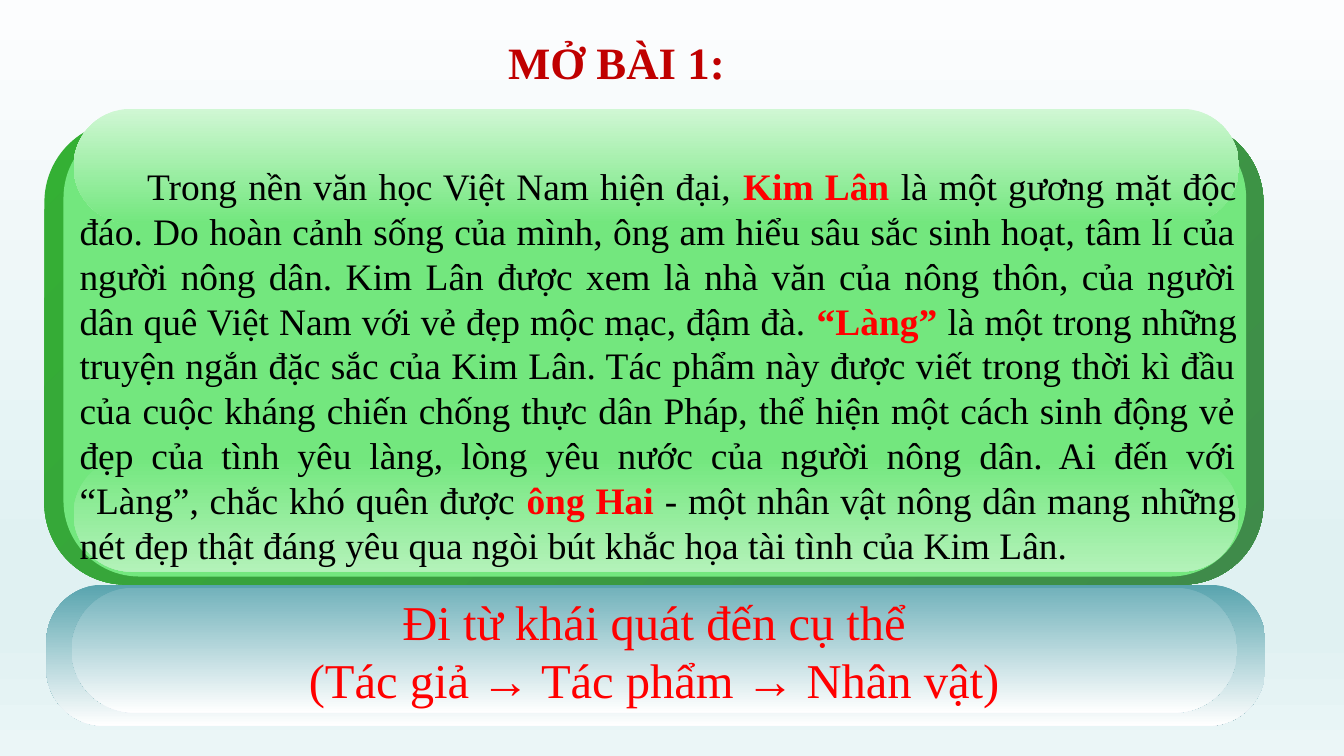
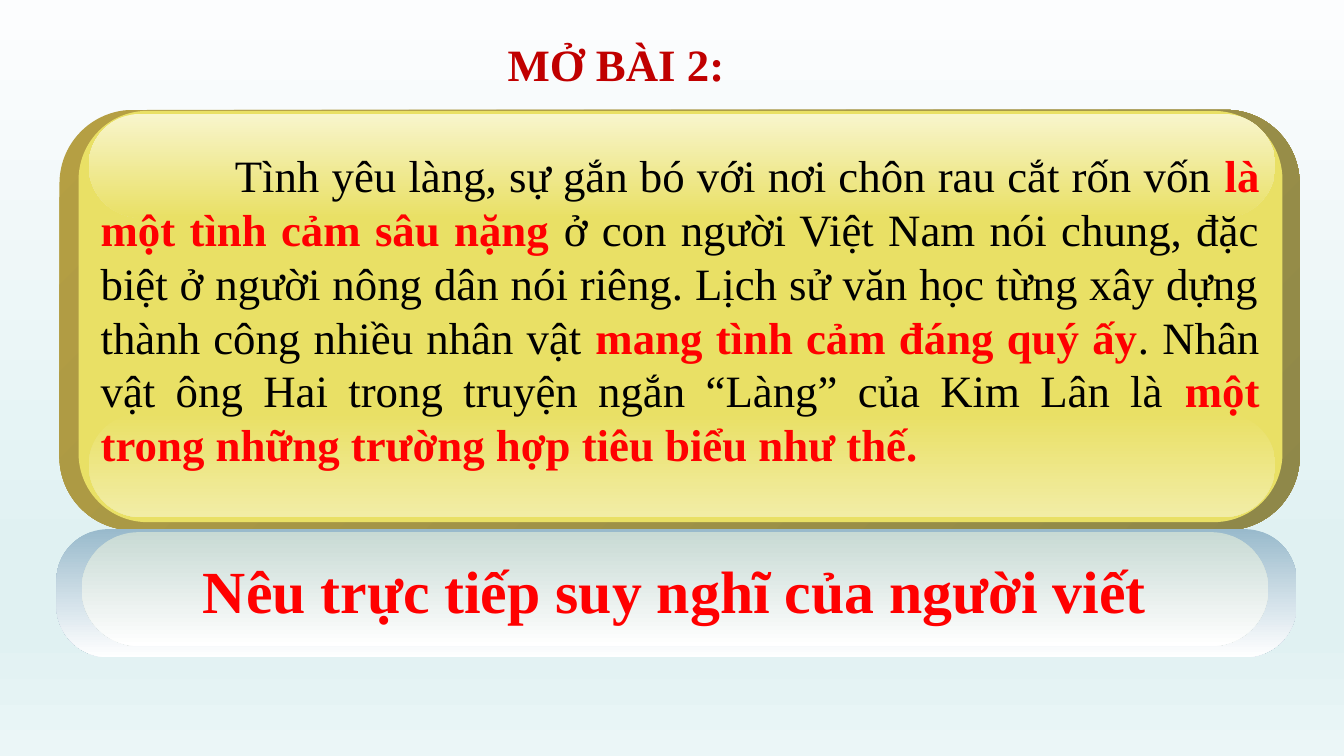
from copy import deepcopy

from pptx import Presentation
from pptx.dml.color import RGBColor
from pptx.enum.shapes import MSO_SHAPE
from pptx.enum.text import MSO_ANCHOR, MSO_AUTO_SIZE, PP_ALIGN
from pptx.util import Pt

ROUNDED = MSO_SHAPE.ROUNDED_RECTANGLE
TOP, MIDDLE = MSO_ANCHOR.TOP, MSO_ANCHOR.MIDDLE
CENTER, JUSTIFY = PP_ALIGN.CENTER, PP_ALIGN.JUSTIFY
FIXED = MSO_AUTO_SIZE.NONE

PX = 9144
SLIDE_W, SLIDE_H = 1333, 750
TITLE_ONLY = 5
FONT = "Times New Roman"
TITLE_SIZE = 32
LEADING = 1.2
DOWN, DIAGONAL = 90, 45

COLORS = {
    "title": "C00000",
    "key": "FF0000",
    "ink": "000000",
    "white": "FFFFFF",
    "sky": "FCFDFE",
    "mist": "E0F1F2",
    "haze": "EBF6F7",
    "green_dark": "34B034",
    "green_edge": "3F8B4A",
    "green": "73E77E",
    "green_light": "B3F2B9",
    "green_pale": "D0F7D4",
    "teal": "58A4AE",
    "teal_light": "72B2BB",
    "gold_dark": "B59F43",
    "gold_edge": "8F8849",
    "gold": "E9E065",
    "gold_light": "F2EDA6",
    "gold_pale": "F8F5CC",
    "steel": "99BACC",
    "sage": "C8DAD4",
}
BACKGROUND = [(0, "sky"), (74, "mist"), (83, "mist"), (100, "haze")]

OPENINGS = [
    {
        "title": "MỞ BÀI 1:",
        "title_box": (178, 29, 867, 64),
        "frame": (44, 120, 1209, 460),
        "top_gloss_y": 108,
        "palette": ("green_dark", "green_edge", "green", "green_light", "green_pale"),
        "essay_box": (69, 157, 1168, 412),
        "essay_size": 26.7,
        "indent": 67,
        "essay": [
            ("Trong nền văn học Việt Nam hiện đại, ", False),
            ("Kim Lân ", True),
            ("là một gương mặt độc đáo. Do hoàn cảnh sống của mình, ông am hiểu "
             "sâu sắc sinh hoạt, tâm lí của người nông dân. Kim Lân được xem là "
             "nhà văn của nông thôn, của người dân quê Việt Nam với vẻ đẹp mộc "
             "mạc, đậm đà. ", False),
            ("“Làng” ", True),
            ("là một trong những truyện ngắn đặc sắc của Kim Lân. Tác phẩm này "
             "được viết trong thời kì đầu của cuộc kháng chiến chống thực dân "
             "Pháp, thể hiện một cách sinh động vẻ đẹp của tình yêu làng, lòng "
             "yêu nước của người nông dân. Ai đến với “Làng”, chắc khó quên "
             "được ", False),
            ("ông Hai ", True),
            ("- một nhân vật nông dân mang những nét đẹp thật đáng yêu qua ngòi "
             "bút khắc họa tài tình của Kim Lân.", False),
        ],
        "banner": (46, 580, 1209, 140),
        "banner_colors": ("teal", "teal_light"),
        "method": ["Đi từ khái quát đến cụ thể", "(Tác giả → Tác phẩm → Nhân vật)"],
        "method_size": 34.7,
        "method_bold": False,
    },
    {
        "title": "MỞ BÀI 2:",
        "title_box": (411, 31, 400, 64),
        "frame": (59, 109, 1230, 417),
        "top_gloss_y": 113,
        "palette": ("gold_dark", "gold_edge", "gold", "gold_light", "gold_pale"),
        "essay_box": (90, 142, 1169, 374),
        "essay_size": 32,
        "indent": 133,
        "essay": [
            ("Tình yêu làng, sự gắn bó với nơi chôn rau cắt rốn vốn ", False),
            ("là một tình cảm sâu nặng ", True),
            ("ở con người Việt Nam nói chung, đặc biệt ở người nông dân nói "
             "riêng. Lịch sử văn học từng xây dựng thành công nhiều nhân vật ", False),
            ("mang tình cảm đáng quý ấy", True),
            (". Nhân vật ông Hai trong truyện ngắn “Làng” của Kim Lân là ", False),
            ("một trong những trường hợp tiêu biểu như thế.", True),
        ],
        "banner": (56, 525, 1230, 127),
        "banner_colors": ("steel", "sage"),
        "method": ["Nêu trực tiếp suy nghĩ của người viết"],
        "method_size": 42.7,
        "method_bold": True,
    },
]


def rgb(color):
    return RGBColor.from_string(COLORS[color])


def paint_gradient(fill, owner, stops, angle):
    fill.gradient()
    fill.gradient_angle = 360 - angle
    stop_list = owner.xpath(".//a:gsLst")[0]
    while len(stop_list) < len(stops):
        stop_list.append(deepcopy(stop_list[0]))
    for stop, (percent, color) in zip(fill.gradient_stops, stops):
        stop.position = percent / 100
        stop.color.rgb = rgb(color)


def add_panel(slide, box, rounding, colors, angle=DOWN):
    panel = slide.shapes.add_shape(ROUNDED, *(round(v) * PX for v in box))
    panel.adjustments[0] = rounding
    panel.shadow.inherit = False
    panel.line.fill.background()
    if len(colors) == 1:
        panel.fill.solid()
        panel.fill.fore_color.rgb = rgb(colors[0])
    else:
        stops = list(zip((0, 100), colors))
        paint_gradient(panel.fill, panel._element.spPr, stops, angle)
    return panel


def write(frame, paragraphs, size, align, anchor, wrap=True, indent=0):
    frame.auto_size = FIXED
    frame.word_wrap = wrap
    frame.vertical_anchor = anchor
    for i, runs in enumerate(paragraphs):
        paragraph = frame.add_paragraph() if i else frame.paragraphs[0]
        paragraph.alignment = align
        paragraph.line_spacing = Pt(size * LEADING)
        paragraph.space_before = Pt(0)
        if indent:
            paragraph._p.get_or_add_pPr().set("indent", str(indent * PX))
        for text, color, bold in runs:
            run = paragraph.add_run()
            run.text = text
            run.font.name = FONT
            run.font.size = Pt(size)
            run.font.bold = bold
            run.font.color.rgb = rgb(color)


def add_title(slide, opening):
    title = slide.shapes.title
    title.left, title.top, title.width, title.height = (
        v * PX for v in opening["title_box"])
    write(title.text_frame, [[(opening["title"], "title", True)]],
          TITLE_SIZE, CENTER, TOP)


def add_essay(slide, opening):
    dark, edge, face, light, pale = opening["palette"]
    x, y, w, h = opening["frame"]
    gloss_x, gloss_w, gloss_h = x + 29, w - 53, h * 0.248
    add_panel(slide, (x, y, w, h), 0.175, (dark, edge), DIAGONAL)
    add_panel(slide, (x + 19, y + 1, w - 36, h - 9), 0.167, (face,))
    add_panel(slide, (gloss_x, y + h - gloss_h - 13, gloss_w, gloss_h),
              0.5, (face, light))
    add_panel(slide, (gloss_x, opening["top_gloss_y"], gloss_w, gloss_h),
              0.5, (pale, face))
    essay = slide.shapes.add_textbox(*(v * PX for v in opening["essay_box"]))
    runs = [(text, "key" if key else "ink", key) for text, key in opening["essay"]]
    write(essay.text_frame, [runs], opening["essay_size"], JUSTIFY, TOP,
          indent=opening["indent"])


def add_banner(slide, opening):
    rim, face = opening["banner_colors"]
    x, y, w, h = opening["banner"]
    add_panel(slide, (x, y, w, h), 0.404, (rim, "white"))
    banner = add_panel(slide, (x + 25, y + 3, w - 53, h * 0.887), 0.5, (face, "white"))
    lines = [[(line, "key", opening["method_bold"])] for line in opening["method"]]
    write(banner.text_frame, lines, opening["method_size"], CENTER, MIDDLE, wrap=False)


def main():
    prs = Presentation()
    prs.slide_width, prs.slide_height = SLIDE_W * PX, SLIDE_H * PX
    master = prs.slide_master
    paint_gradient(master.background.fill, master._element, BACKGROUND, DOWN)
    for opening in OPENINGS:
        slide = prs.slides.add_slide(prs.slide_layouts[TITLE_ONLY])
        add_title(slide, opening)
        add_essay(slide, opening)
        add_banner(slide, opening)
    prs.save("out.pptx")


if __name__ == "__main__":
    main()
